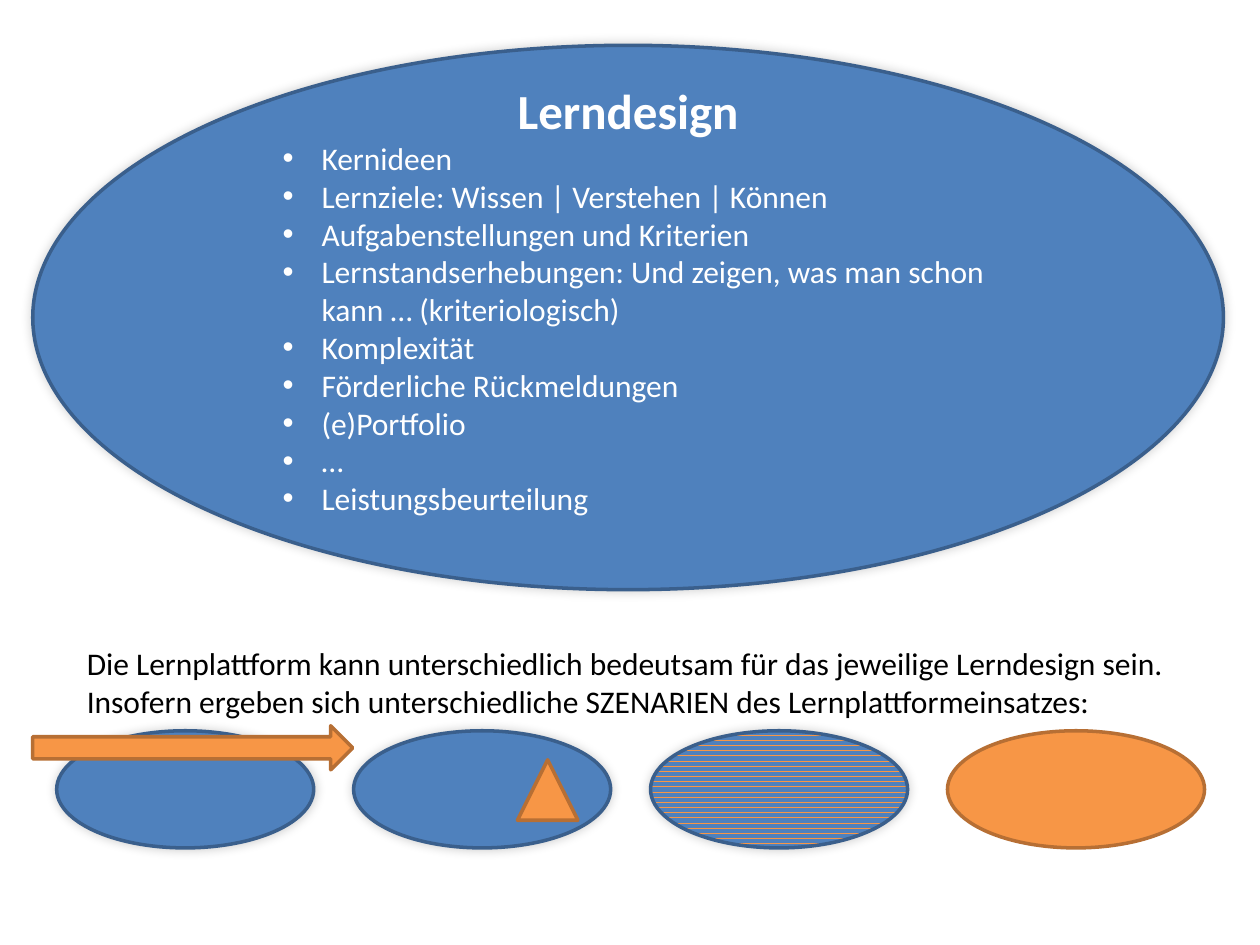
import pptx
import pptx.util
import pptx.dml.color
import pptx.enum.dml
import pptx.enum.shapes
import pptx.enum.text
import pptx.oxml
import pptx.oxml.ns

Pt = pptx.util.Pt
KIND = pptx.enum.shapes.MSO_SHAPE
ALIGN = pptx.enum.text.PP_ALIGN
FONT = "Calibri"
CELL = pptx.util.Inches(0.1)  # the slide is a grid of 100 columns by 75 rows
COLOR = {
    "blue": "4F81BD", "navy": "3A5F8C",
    "orange": "F79646", "brown": "B76F34",
    "white": "FFFFFF", "black": "000000",
}
EDGE = {"blue": "navy", "orange": "brown"}
IDEAS = [
    "Kernideen",
    "Lernziele: Wissen | Verstehen | Können",
    "Aufgabenstellungen und Kriterien",
    "Lernstandserhebungen: Und zeigen, was man schon kann … (kriteriologisch)",
    "Komplexität",
    "Förderliche Rückmeldungen",
    "(e)Portfolio",
    "…",
    "Leistungsbeurteilung",
]
NOTE = ("Die Lernplattform kann unterschiedlich bedeutsam für das jeweilige "
        "Lerndesign sein. Insofern ergeben sich unterschiedliche SZENARIEN "
        "des Lernplattformeinsatzes:")


def rgb(name):
    return pptx.dml.color.RGBColor.from_string(COLOR[name])


def place(box):
    """Turn grid units into slide lengths."""
    return [round(n * CELL) for n in box]


def style(font, size, color, bold=False):
    font.name, font.size, font.bold = FONT, Pt(size), bold
    font.color.rgb = rgb(color)


def glow(shape):
    """Add a soft dark shadow all round."""
    shape.shadow.inherit = False
    effects = shape._element.spPr.find(pptx.oxml.ns.qn("a:effectLst"))
    effects.append(pptx.oxml.parse_xml(
        f'<a:outerShdw {pptx.oxml.ns.nsdecls("a")} blurRad="{Pt(6)}" dist="0" '
        f'dir="{315 * 60000}" rotWithShape="0"><a:srgbClr val="{COLOR["black"]}">'
        '<a:alpha val="20000"/></a:srgbClr></a:outerShdw>'))


def draw(slide, kind, box, color):
    shape = slide.shapes.add_shape(kind, *place(box))
    shape.shadow.inherit = False
    shape.fill.solid()
    shape.fill.fore_color.rgb = rgb(color)
    shape.line.color.rgb = rgb(EDGE[color])
    shape.line.width = Pt(2)
    if color == "blue":
        glow(shape)
    return shape


def bullet(para):
    props = para._p.get_or_add_pPr()
    props.set("marL", str(pptx.util.Inches(0.81)))
    props.set("indent", str(pptx.util.Inches(-0.31)))
    for tag in ('buFont typeface="Arial"', 'buChar char="•"'):
        props.append(pptx.oxml.parse_xml(
            f'<a:{tag} {pptx.oxml.ns.nsdecls("a")}/>'))


def design(slide, box):
    """Place the large ellipse with its heading and list."""
    frame = draw(slide, KIND.OVAL, box, "blue").text_frame
    frame.word_wrap = True
    frame.vertical_anchor = pptx.enum.text.MSO_ANCHOR.MIDDLE
    frame.margin_bottom = pptx.util.Inches(0.35)
    head = frame.paragraphs[0]
    head.text = "Lerndesign"
    head.alignment = ALIGN.CENTER
    style(head.font, 28, "white", True)
    for idea in IDEAS:
        para = frame.add_paragraph()
        para.text = idea
        para.level = 1
        para.alignment = ALIGN.LEFT
        bullet(para)
        style(para.font, 18, "white")


def note(slide, box):
    frame = slide.shapes.add_textbox(*place(box)).text_frame
    frame.word_wrap = True
    para = frame.paragraphs[0]
    para.text = NOTE
    style(para.font, 18, "black")


def cases(slide, box):
    """Place four ellipses, evenly spread, with the marks on the first two."""
    left, top, wide, high = box
    size = 20.4
    step = (wide - size) / 3
    ovals = [draw(slide, KIND.OVAL, (left + i * step, top, size, high), color)
             for i, color in enumerate(["blue", "blue", "blue", "orange"])]
    fill = ovals[2].fill
    fill.patterned()
    fill.pattern = pptx.enum.dml.MSO_PATTERN.DARK_HORIZONTAL
    fill.fore_color.rgb = rgb("blue")
    fill.back_color.rgb = rgb("orange")
    draw(slide, KIND.ISOSCELES_TRIANGLE,
         (left + step + 13, top + 2.3, 4.8, 4.8), "orange")
    draw(slide, KIND.RIGHT_ARROW, (left - 1.9, top - 0.4, 25.4, 3.5), "orange")


def main():
    deck = pptx.Presentation()
    deck.slide_width, deck.slide_height = 100 * CELL, 75 * CELL
    slide = deck.slides.add_slide(deck.slide_layouts[6])
    design(slide, (2.6, 3.6, 94.5, 43.2))
    note(slide, (5.9, 50.6, 88.2, 7.1))
    cases(slide, (4.5, 58, 91.1, 9.3))
    deck.save("out.pptx")


if __name__ == "__main__":
    main()
